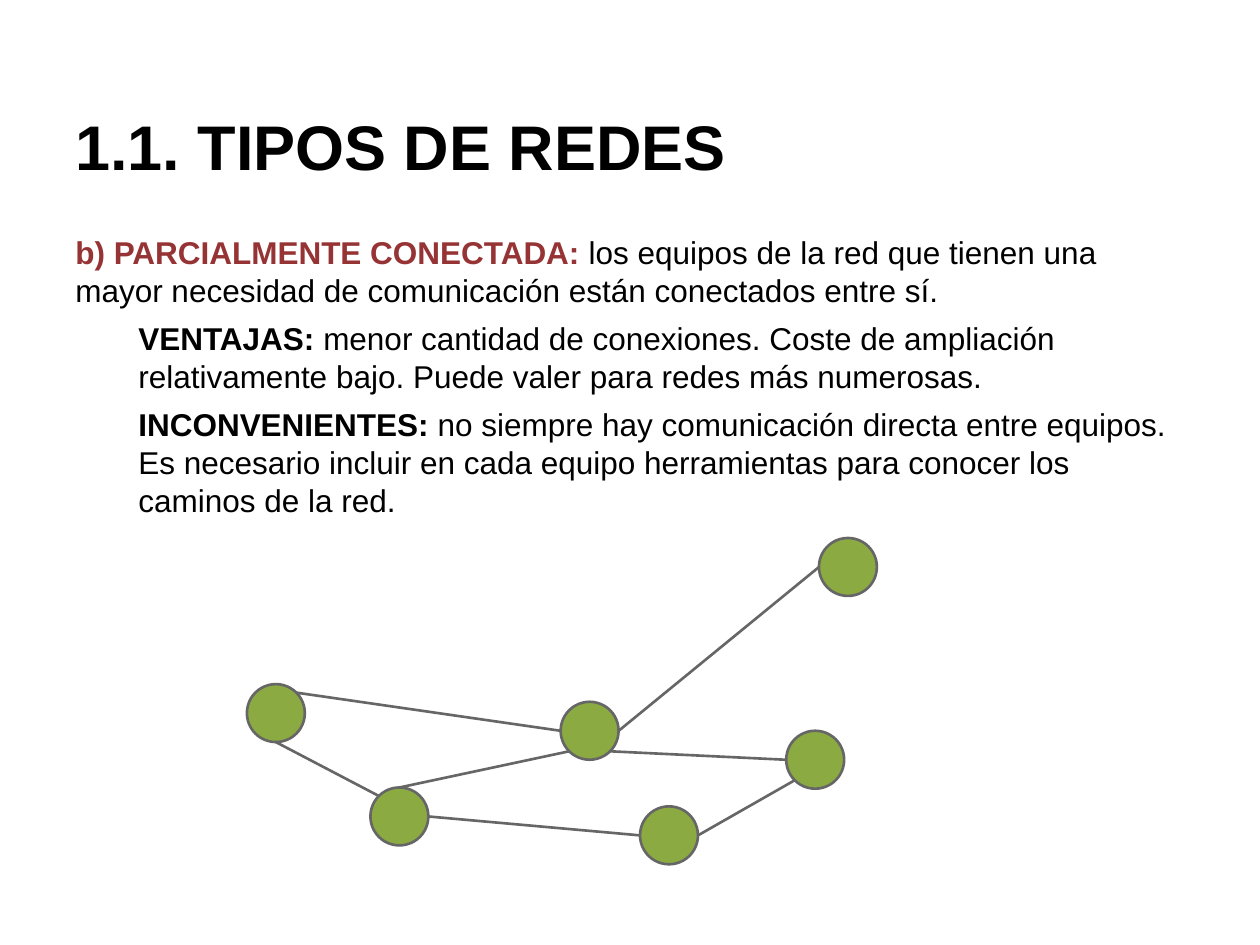
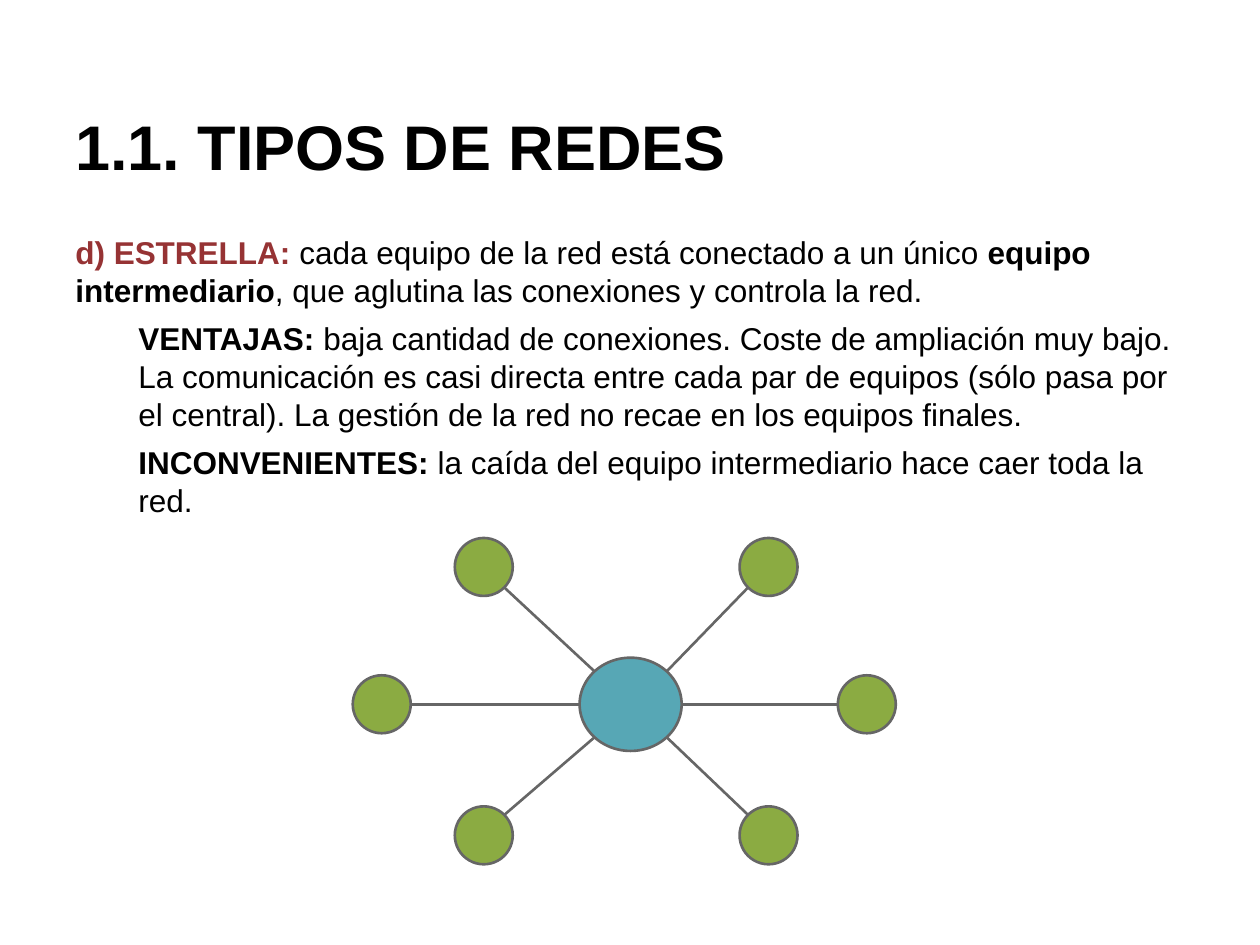
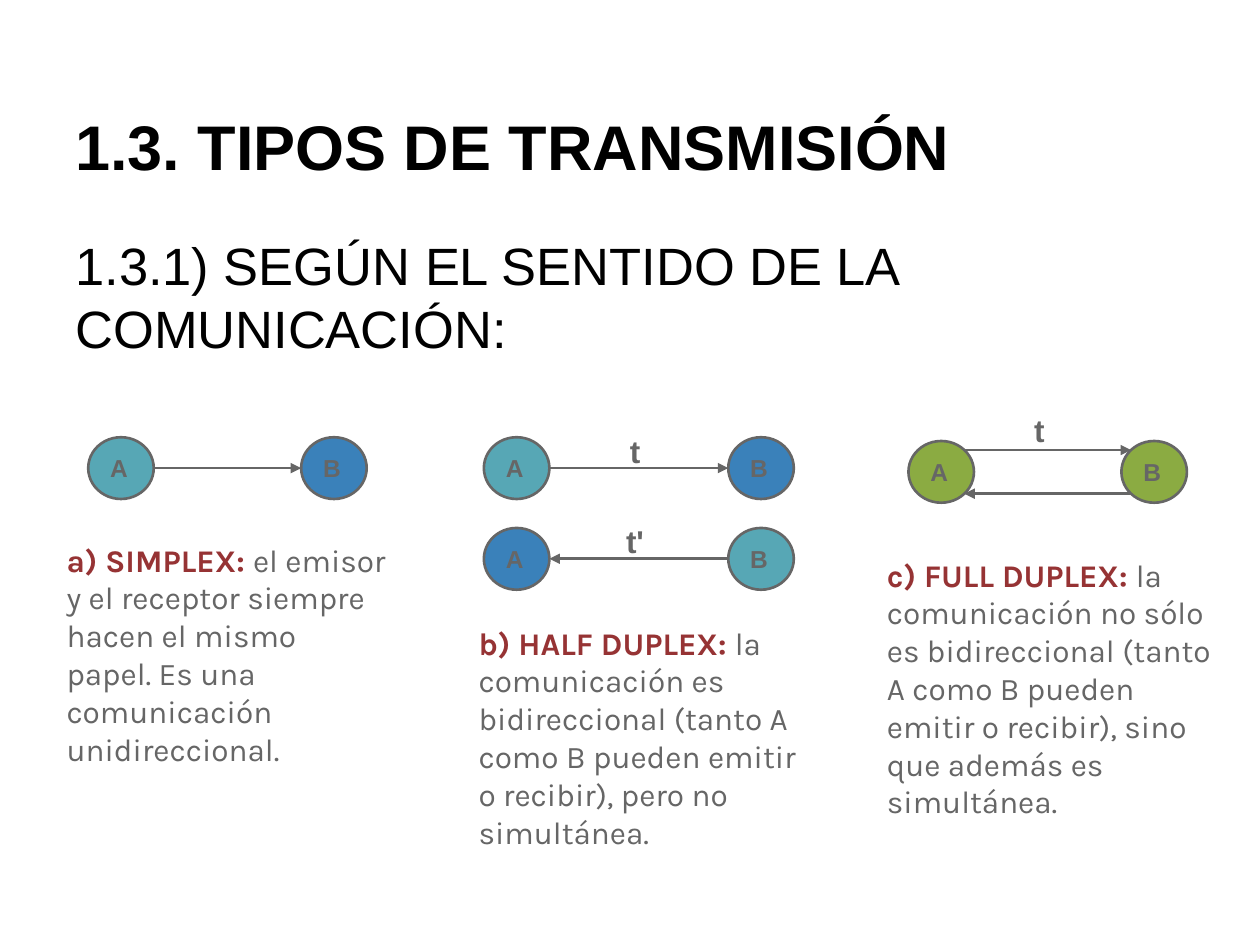
from lxml import etree
from pptx import Presentation
from pptx.dml.color import RGBColor
from pptx.enum.shapes import MSO_CONNECTOR, MSO_SHAPE
from pptx.enum.text import MSO_ANCHOR
from pptx.oxml.ns import qn
from pptx.util import Inches, Pt

ELLIPSE = MSO_SHAPE.OVAL
STRAIGHT = MSO_CONNECTOR.STRAIGHT
TOP, MIDDLE, BOTTOM = MSO_ANCHOR.TOP, MSO_ANCHOR.MIDDLE, MSO_ANCHOR.BOTTOM

SLIDE_WIDTH, SLIDE_HEIGHT = Inches(10), Inches(7.5)
CELL = SLIDE_WIDTH / 100
INSET = Inches(0.1)
LINE_PITCH = 1.2

BLACK, GRAY, RED = "000000", "666666", "963334"
GREEN, TEAL, BLUE = "8BAB42", "57A7B5", "3A81BA"

TITLE_BOX = (5, 3, 90, 12.5)
BODY_BOX = (5, 17.5, 90, 29.7)
NODE_SIZE = 4.6
STATION_WIDTH, STATION_HEIGHT = 5.2, 4.9
DIAGONAL = 0.5 ** 0.5
DIRECTIONS = {
    "N": (0, -1), "S": (0, 1), "W": (-1, 0), "E": (1, 0),
    "NW": (-DIAGONAL, -DIAGONAL), "NE": (DIAGONAL, -DIAGONAL),
    "SW": (-DIAGONAL, DIAGONAL), "SE": (DIAGONAL, DIAGONAL),
}
OPPOSITE = {"N": "S", "S": "N", "W": "E", "E": "W",
            "NW": "SE", "SE": "NW", "NE": "SW", "SW": "NE"}


def color(hex_code):
    """Turn a hex string into a colour."""
    return RGBColor.from_string(hex_code)


def grid(*cells):
    """Turn grid cells into slide lengths."""
    return [round(cell * CELL) for cell in cells]


def write(frame, paragraphs, size=18, font="Arial", ink=BLACK, anchor=TOP,
          before=0, indent=0):
    """Fill a frame with paragraphs of (text, bold, colour) runs; indent all but the first."""
    frame.word_wrap = True
    frame.vertical_anchor = anchor
    frame.margin_left = frame.margin_right = INSET
    frame.margin_top = frame.margin_bottom = INSET
    for number, runs in enumerate(paragraphs):
        paragraph = frame.add_paragraph() if number else frame.paragraphs[0]
        paragraph.space_before = Pt(before)
        paragraph.line_spacing = Pt(size * LINE_PITCH)
        properties = paragraph._p.get_or_add_pPr()
        properties.set("algn", "l")
        if number and indent:
            properties.set("marL", str(Inches(indent)))
            properties.set("indent", "0")
        for text, bold, *own_ink in runs:
            run = paragraph.add_run()
            run.text = text
            run.font.size = Pt(size)
            run.font.name = font
            run.font.bold = bold
            run.font.color.rgb = color(own_ink[0] if own_ink else ink)


def add_text(slide, box, paragraphs, **style):
    """Place a text box on the grid."""
    write(slide.shapes.add_textbox(*grid(*box)).text_frame, paragraphs, **style)


def add_node(slide, box, fill, letter=None):
    """Draw an outlined ellipse, with a letter if one is given."""
    node = slide.shapes.add_shape(ELLIPSE, *grid(*box))
    node.shadow.inherit = False
    node.fill.solid()
    node.fill.fore_color.rgb = color(fill)
    node.line.color.rgb = color(GRAY)
    node.line.width = Pt(1.5)
    if letter:
        write(node.text_frame, [[(letter, True)]], size=14, ink=GRAY, anchor=MIDDLE)


def edge_point(box, direction):
    """Find the point of an ellipse's rim in a compass direction."""
    left, top, width, height = box
    across, down = DIRECTIONS[direction]
    return left + width * (1 + across) / 2, top + height * (1 + down) / 2


def add_link(slide, start_box, start_side, end_box, end_side, arrow=False):
    """Join two ellipses from rim to rim."""
    ends = edge_point(start_box, start_side) + edge_point(end_box, end_side)
    link = slide.shapes.add_connector(STRAIGHT, *grid(*ends))
    link.line.color.rgb = color(GRAY)
    link.line.width = Pt(1.5)
    if arrow:
        etree.SubElement(link.line._get_or_add_ln(), qn("a:tailEnd"), type="triangle")
    etree.SubElement(link._element.spPr, qn("a:effectLst"))


def add_titled_slide(deck, title):
    """Add a blank slide with the shared title."""
    slide = deck.slides.add_slide(deck.slide_layouts[6])
    add_text(slide, TITLE_BOX, [[(title, True)]], size=36, anchor=BOTTOM)
    return slide


def add_network_slide(deck, heading, definition, advantages, drawbacks):
    """Add a slide that defines a network type with its pros and cons."""
    slide = add_titled_slide(deck, "1.1. TIPOS DE REDES")
    add_text(slide, BODY_BOX, [
        [(heading, True, RED), *definition],
        [("VENTAJAS: ", True), (advantages, False)],
        [("INCONVENIENTES:", True), (drawbacks, False)],
    ], before=6, indent=0.5)
    return slide


def draw_partial_mesh(slide, left, top):
    """Draw six hosts of which only some are joined."""
    offsets = {"a": (0, 11.6), "b": (9.8, 19.8), "c": (24.9, 13),
               "d": (45.4, 0), "e": (31.2, 21.3), "f": (42.8, 15.3)}
    hosts = {key: (left + x, top + y, NODE_SIZE, NODE_SIZE)
             for key, (x, y) in offsets.items()}
    for host in hosts.values():
        add_node(slide, host, GREEN)
    for start, start_side, end, end_side in [
        ("a", "NE", "c", "W"), ("c", "E", "d", "W"), ("e", "W", "b", "E"),
        ("b", "NW", "a", "S"), ("c", "SW", "b", "N"), ("e", "E", "f", "SW"),
        ("f", "W", "c", "SE"),
    ]:
        add_link(slide, hosts[start], start_side, hosts[end], end_side)


def draw_star(slide, left, top):
    """Draw six hosts around a hub."""
    hub = (left + 18, top + 9.5, 8.1, 7.4)
    add_node(slide, hub, TEAL)
    for side, x, y in [("W", 0, 10.9), ("SW", 8.1, 21.3), ("NW", 8.1, 0),
                       ("NE", 30.7, 0), ("SE", 30.7, 21.3), ("E", 38.5, 10.9)]:
        host = (left + x, top + y, NODE_SIZE, NODE_SIZE)
        add_node(slide, host, GREEN)
        add_link(slide, hub, side, host, OPPOSITE[side])


def draw_exchange(slide, left, top, span, fills, arrows, label=None):
    """Draw stations A and B, the arrows between them and a time label."""
    stations = {}
    for letter, x, fill in zip("AB", (0, span), fills):
        stations[letter] = (left + x, top, STATION_WIDTH, STATION_HEIGHT)
        add_node(slide, stations[letter], fill, letter)
    for start, start_side, end, end_side in arrows:
        add_link(slide, stations[start], start_side, stations[end], end_side, arrow=True)
    if label:
        text, x, y = label
        add_text(slide, (left + x, top + y, 3.9, 3.2), [[(text, True)]], ink=GRAY)


def add_transmission_slide(deck):
    """Add the slide on simplex, half duplex and full duplex."""
    slide = add_titled_slide(deck, "1.3. TIPOS DE TRANSMISIÓN")
    add_text(slide, (5, 17.5, 90, 14.1),
             [[("1.3.1) SEGÚN EL SENTIDO DE LA COMUNICACIÓN:", False)]],
             size=30, before=6)
    forward, backward = ("A", "E", "B", "W"), ("B", "W", "A", "E")
    both_ways = [("A", "NE", "B", "NW"), ("B", "SW", "A", "SE")]
    draw_exchange(slide, 7, 34.7, 16.9, (TEAL, BLUE), [forward])
    draw_exchange(slide, 38.4, 34.7, 19.4, (TEAL, BLUE), [forward], ("t", 10.6, -1.4))
    draw_exchange(slide, 38.4, 41.9, 19.4, (BLUE, TEAL), [backward], ("t'", 10.3, -1.5))
    draw_exchange(slide, 72.1, 35, 16.9, (GREEN, GREEN), both_ways, ("t", 9, -3.4))
    for box, heading, definition in [
        ((4.3, 41.9, 27.4, 18.6), "a) SIMPLEX: ",
         "el emisor y el receptor siempre hacen el mismo papel. "
         "Es una comunicación unidireccional."),
        ((37, 48.5, 27.4, 20.7), "b) HALF DUPLEX: ",
         "la comunicación es bidireccional (tanto A como B pueden emitir o recibir), "
         "pero no simultánea."),
        ((69.4, 43.1, 28.1, 27.7), "c) FULL DUPLEX: ",
         "la comunicación no sólo es bidireccional (tanto A como B pueden emitir o "
         "recibir), sino que además es simultánea."),
    ]:
        add_text(slide, box, [[(heading, True, RED), (definition, False)]],
                 font="Karla", ink=GRAY, before=6)


def main():
    """Build and save the deck."""
    deck = Presentation()
    deck.slide_width, deck.slide_height = SLIDE_WIDTH, SLIDE_HEIGHT
    partial = add_network_slide(
        deck, "b) PARCIALMENTE CONECTADA:",
        [(" los equipos de la red que tienen una mayor necesidad de comunicación "
          "están conectados entre sí.", False)],
        "menor cantidad de conexiones. Coste de ampliación relativamente bajo. "
        "Puede valer para redes más numerosas.",
        " no siempre hay comunicación directa entre equipos. Es necesario incluir en "
        "cada equipo herramientas para conocer los caminos de la red.")
    draw_partial_mesh(partial, 19.6, 42.7)
    star = add_network_slide(
        deck, "d) ESTRELLA:",
        [(" cada equipo de la red está conectado a un único ", False),
         ("equipo intermediario", True),
         (", que aglutina las conexiones y controla la red.", False)],
        "baja cantidad de conexiones. Coste de ampliación muy bajo. La comunicación "
        "es casi directa entre cada par de equipos (sólo pasa por el central). "
        "La gestión de la red no recae en los equipos finales.",
        " la caída del equipo intermediario hace caer toda la red.")
    draw_star(star, 28, 42.7)
    add_transmission_slide(deck)
    deck.save("out.pptx")


if __name__ == "__main__":
    main()
